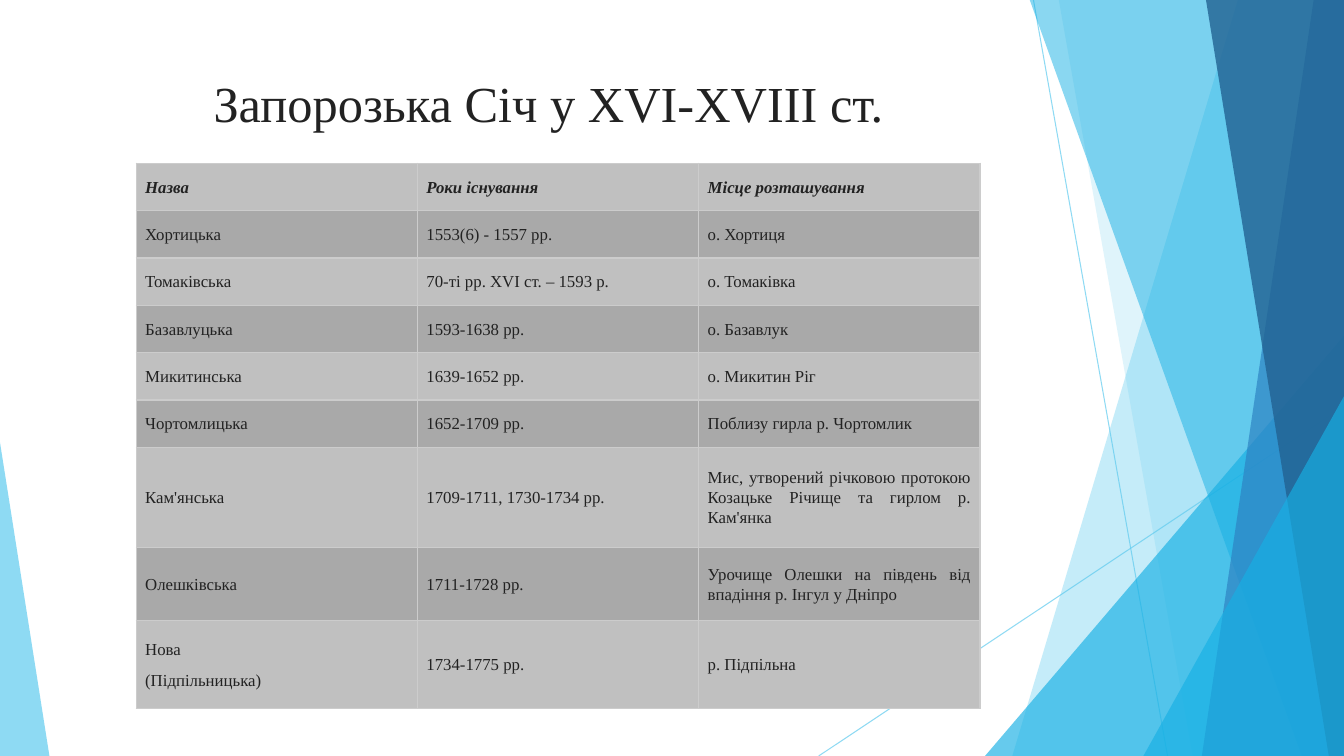
from dataclasses import dataclass

from pptx import Presentation
from pptx.dml.color import RGBColor
from pptx.enum.shapes import MSO_CONNECTOR, MSO_SHAPE
from pptx.enum.text import MSO_ANCHOR, PP_ALIGN
from pptx.oxml.ns import qn
from pptx.oxml.xmlchemy import OxmlElement
from pptx.util import Inches, Pt

LINE = MSO_CONNECTOR.STRAIGHT
TRIANGLE = MSO_SHAPE.ISOSCELES_TRIANGLE
TOP, MIDDLE = MSO_ANCHOR.TOP, MSO_ANCHOR.MIDDLE
CENTER, JUSTIFY = PP_ALIGN.CENTER, PP_ALIGN.JUSTIFY


@dataclass(frozen=True)
class Theme:
    font: str = "Times New Roman"
    ink: str = "222222"
    light: str = "C0C0C0"
    dark: str = "A9A9A9"
    border: str = "CCCCCC"
    sky: str = "5FCBEF"
    cyan: str = "17B0E4"
    blue: str = "2E83C3"
    navy: str = "226292"
    title: int = 36
    body: int = 12


THEME = Theme()
WIDTH, HEIGHT = 13.33, 7.5

ROWS = [
    ("Назва", "Роки існування", "Місце розташування"),
    ("Хортицька", "1553(6) - 1557 pp.", "о. Хортиця"),
    ("Томаківська", "70-ті pp. XVI ст. – 1593 р.", "о. Томаківка"),
    ("Базавлуцька", "1593-1638 pp.", "о. Базавлук"),
    ("Микитинська", "1639-1652 pp.", "о. Микитин Ріг"),
    ("Чортомлицька", "1652-1709 pp.", "Поблизу гирла р. Чортомлик"),
    ("Кам'янська", "1709-1711, 1730-1734 pp.",
     "Мис, утворений річковою протокою Козацьке Річище та гирлом р. Кам'янка"),
    ("Олешківська", "1711-1728 pp.",
     "Урочище Олешки на південь від впадіння р. Інгул у Дніпро"),
    ("Нова\n(Підпільницька)", "1734-1775 pp.", "р. Підпільна"),
]
TALLS = [0.47] * 6 + [0.99, 0.73, 0.87]


def write(frame, text, size, color, align, anchor, bold=False, italic=False,
          space=None, after=None):
    """Fill a text frame, one paragraph for each line of text."""
    frame.text = text
    frame.word_wrap = True
    frame.vertical_anchor = anchor
    for para in frame.paragraphs:
        para.alignment = align
        if space:
            para.line_spacing = space
        if after is not None:
            para.space_after = Pt(after)
        for run in para.runs:
            font = run.font
            font.name, font.size = THEME.font, Pt(size)
            font.bold, font.italic = bold, italic
            font.color.rgb = RGBColor.from_string(color)


def fade(shape, percent):
    """Set the opacity of every colour of a shape."""
    for color in shape._element.spPr.iter(qn("a:srgbClr")):
        alpha = OxmlElement("a:alpha")
        alpha.set("val", str(percent * 1000))
        color.append(alpha)


def edge(cell, color, width):
    """Draw all four borders of a table cell; call before its fill is set."""
    props = cell._tc.get_or_add_tcPr()
    for side in ("a:lnL", "a:lnR", "a:lnT", "a:lnB"):
        line, fill, tint = map(OxmlElement, (side, "a:solidFill", "a:srgbClr"))
        line.set("w", str(Pt(width)))
        tint.set("val", color)
        fill.append(tint)
        line.append(fill)
        props.append(line)


class Board:
    """The slide in work and the style of its elements."""

    def __init__(self, slide, theme):
        self.slide, self.shapes, self.theme = slide, slide.shapes, theme

    def title(self, text, left, top, width, height):
        box = self.shapes.title
        box.left, box.top = Inches(left), Inches(top)
        box.width, box.height = Inches(width), Inches(height)
        write(box.text_frame, text, self.theme.title, self.theme.ink, CENTER, TOP)

    def line(self, start, end):
        line = self.shapes.add_connector(LINE, *map(Inches, start + end))
        line.line.color.rgb = RGBColor.from_string(self.theme.sky)
        line.line.width = Pt(0.75)
        line._element.spPr.append(OxmlElement("a:effectLst"))
        fade(line, 70)

    def paint(self, shape, color, alpha):
        shape.shadow.inherit = False
        shape.fill.solid()
        shape.fill.fore_color.rgb = RGBColor.from_string(color)
        shape.line.fill.background()
        fade(shape, alpha)

    def band(self, top, foot, color, alpha):
        """Fill from a slanted left edge to the right side of the slide."""
        high = -0.01
        points = [(top, high), (WIDTH, high), (WIDTH, HEIGHT), (foot, HEIGHT)]
        points = [(Inches(x), Inches(y)) for x, y in points]
        form = self.shapes.build_freeform(*points[0], scale=1.0)
        form.add_line_segments(points[1:], close=True)
        self.paint(form.convert_to_shape(), color, alpha)

    def wedge(self, left, top, width, peak, color, alpha):
        """Stand a triangle on the slide's foot, its peak at 0 left to 1 right."""
        box = map(Inches, (left, top, width, HEIGHT - top))
        shape = self.shapes.add_shape(TRIANGLE, *box)
        shape.adjustments[0] = peak
        self.paint(shape, color, alpha)

    def table(self, rows, talls, left, top, width):
        count = len(rows[0])
        frame = self.shapes.add_table(len(rows), count, Inches(left), Inches(top),
                                      Inches(width), Inches(sum(talls)))
        table = frame.table
        table.horz_banding = table.first_row = False
        for col in table.columns:
            col.width = Inches(width / count)
        for i, (texts, tall) in enumerate(zip(rows, talls)):
            table.rows[i].height = Inches(tall)
            shade = self.theme.dark if i % 2 else self.theme.light
            for j, text in enumerate(texts):
                self.cell(table.cell(i, j), text, shade, i == 0)

    def cell(self, cell, text, shade, head):
        edge(cell, self.theme.border, 1)
        cell.fill.solid()
        cell.fill.fore_color.rgb = RGBColor.from_string(shade)
        cell.margin_left = cell.margin_right = Inches(0.09)
        cell.margin_top = cell.margin_bottom = Inches(0.09)
        write(cell.text_frame, text, self.theme.body, self.theme.ink, JUSTIFY,
              MIDDLE, bold=head, italic=head, space=1.07, after=8)
        cell.vertical_anchor = MIDDLE


def main():
    deck = Presentation()
    deck.slide_width, deck.slide_height = Inches(WIDTH), Inches(HEIGHT)
    board = Board(deck.slides.add_slide(deck.slide_layouts[5]), THEME)

    board.line((10.25, 0), (11.58, HEIGHT))
    board.line((WIDTH, 4.03), (8.12, HEIGHT))
    board.band(12.28, 10.04, THEME.sky, 36)
    board.band(10.5, 11.83, THEME.sky, 20)
    board.wedge(9.77, 3.33, 3.56, 1, THEME.cyan, 66)
    board.band(10.21, 12.91, THEME.cyan, 50)
    board.band(13.03, 11.92, THEME.blue, 70)
    board.band(11.96, 13.18, THEME.navy, 80)
    board.wedge(11.34, 3.93, 1.99, 1, THEME.cyan, 66)
    board.wedge(0, 4.39, 0.49, 0, THEME.sky, 70)

    board.title("Запорозька Січ у XVI-XVIII ст.", 0.74, 0.67, 9.4, 1.44)
    board.table(ROWS, TALLS, 1.35, 1.62, 8.37)
    deck.save("out.pptx")


if __name__ == "__main__":
    main()
